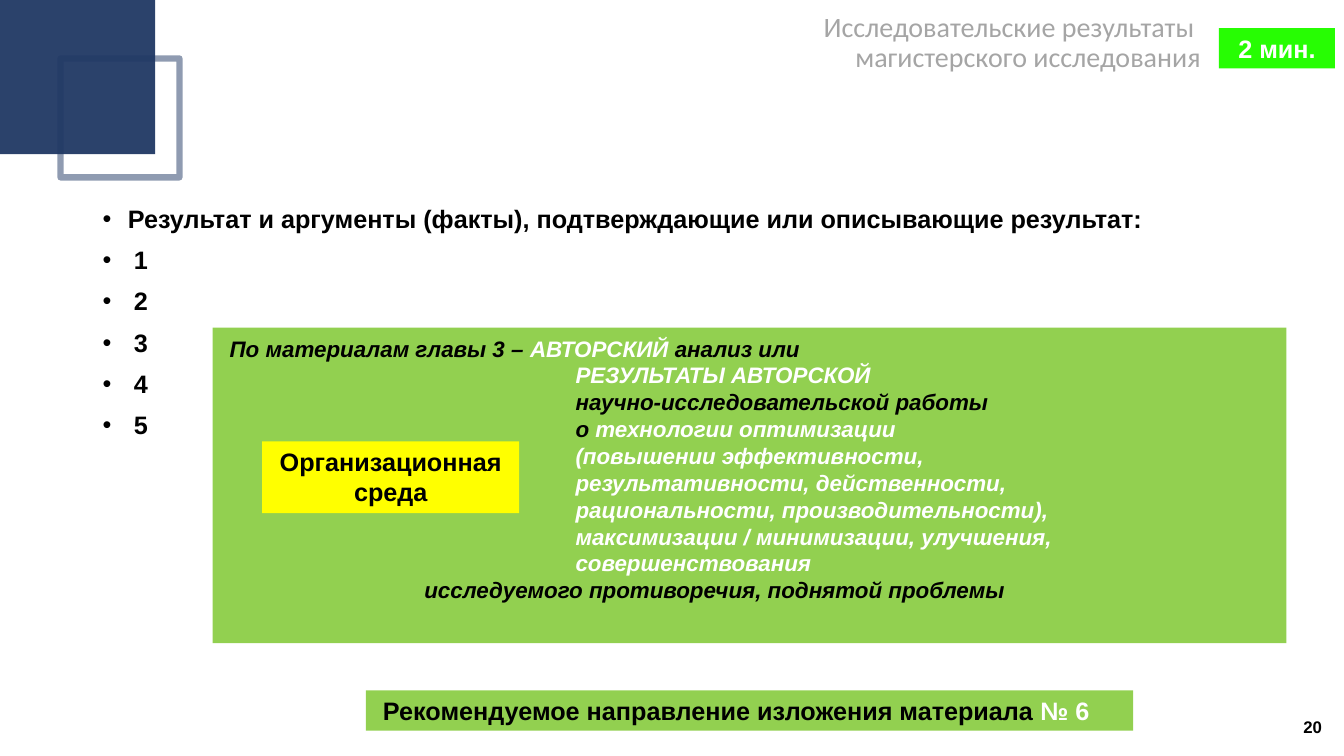
from lxml import etree
from pptx import Presentation
from pptx.dml.color import RGBColor
from pptx.enum.shapes import MSO_SHAPE
from pptx.enum.text import MSO_ANCHOR, PP_ALIGN
from pptx.oxml.ns import qn
from pptx.util import Inches, Pt

RECT = MSO_SHAPE.RECTANGLE
TOP, MIDDLE = MSO_ANCHOR.TOP, MSO_ANCHOR.MIDDLE
LEFT, CENTER, RIGHT = PP_ALIGN.LEFT, PP_ALIGN.CENTER, PP_ALIGN.RIGHT

NAVY = RGBColor(0x20, 0x38, 0x64)
GREEN = RGBColor(0x92, 0xD0, 0x50)
LIME = RGBColor(0x27, 0xFD, 0x03)
YELLOW = RGBColor(0xFF, 0xFF, 0x00)
GREY = RGBColor(0xA5, 0xA5, 0xA5)
BLACK = RGBColor(0x00, 0x00, 0x00)
WHITE = RGBColor(0xFF, 0xFF, 0xFF)


class Deck:
    font = "Arial"

    def __init__(self):
        self.prs = Presentation()
        self.prs.slide_width = Inches(13.33)
        self.prs.slide_height = Inches(7.5)
        self.slide = self.prs.slides.add_slide(self.prs.slide_layouts[6])

    def fade(self, fill, percent):
        """Set the opacity of a solid fill on a shape or its line."""
        color = fill._xPr.find(qn("a:solidFill"))[0]
        etree.SubElement(color, qn("a:alpha")).set("val", str(percent * 1000))

    def rect(self, box, fill=None, line=None, width=0, alpha=100):
        shape = self.slide.shapes.add_shape(RECT, *map(Inches, box))
        shape.shadow.inherit = False
        if fill is None:
            shape.fill.background()
        else:
            shape.fill.solid()
            shape.fill.fore_color.rgb = fill
        if line is None:
            shape.line.fill.background()
        else:
            shape.line.color.rgb = line
            shape.line.width = Pt(width)
        if alpha < 100:
            self.fade(shape.fill if line is None else shape.line.fill, alpha)
        return shape

    def area(self, box):
        return self.slide.shapes.add_textbox(*map(Inches, box))

    def frame(self, shape, anchor=TOP, inset=(0.1, 0.05)):
        frame = shape.text_frame
        frame.word_wrap = True
        frame.vertical_anchor = anchor
        frame.margin_left = frame.margin_right = Inches(inset[0])
        frame.margin_top = frame.margin_bottom = Inches(inset[1])
        return frame

    def para(self, frame, runs, size=18, align=LEFT, indent=0, bullet=False,
             space=None, gap=0, bold=True, italic=False, font=None):
        """Add a paragraph of (text, colour) runs."""
        first = not frame.paragraphs[0].runs
        para = frame.paragraphs[0] if first else frame.add_paragraph()
        props = para._p.get_or_add_pPr()
        props.set("marL", str(Inches(indent)))
        if bullet:
            props.set("indent", str(-Inches(indent)))
            etree.SubElement(props, qn("a:buFont")).set("typeface", "Arial")
            etree.SubElement(props, qn("a:buChar")).set("char", "•")
        para.alignment = align
        if space:
            para.line_spacing = space
        if gap and not first:
            para.space_before = Pt(gap)
        for text, color in runs:
            run = para.add_run()
            run.text = text
            run.font.name = font or self.font
            run.font.size = Pt(size)
            run.font.bold = bold
            run.font.italic = italic
            run.font.color.rgb = color

    def label(self, box, fill, runs, align=CENTER, indent=0):
        frame = self.frame(self.rect(box, fill))
        self.para(frame, runs, align=align, indent=indent)

    def save(self):
        self.prs.save("out.pptx")


def main():
    deck = Deck()
    deck.rect((0.6, 0.58, 1.18, 1.18), line=NAVY, width=4.5, alpha=50)
    deck.rect((0, -0.01, 1.54, 1.54), NAVY, alpha=95)

    results = deck.frame(deck.area((0.92, 2, 11.5, 4.76)))
    head = "Результат и аргументы (факты), подтверждающие или описывающие результат:"
    for text in (head, "1", "2", "3", "4", "5"):
        deck.para(results, [(text, BLACK)], bullet=True, space=0.9, gap=10,
                  indent=0.25 if text == head else 0.31)

    topic = deck.frame(deck.rect((2.11, 3.25, 10.65, 3.13), GREEN),
                       inset=(0.1, 0.07))
    near, far, mid = 0.07, 3.5, 2
    lines = (
        (near, [("По материалам главы 3 – ", BLACK), ("АВТОРСКИЙ", WHITE),
                (" анализ или", BLACK)]),
        (far, [("РЕЗУЛЬТАТЫ АВТОРСКОЙ", WHITE)]),
        (far, [("научно-исследовательской работы", BLACK)]),
        (far, [("о ", BLACK), ("технологии оптимизации", WHITE)]),
        (far, [("(повышении эффективности,", WHITE)]),
        (far, [("результативности, действенности,", WHITE)]),
        (far, [("рациональности, производительности),", WHITE)]),
        (far, [("максимизации / минимизации, улучшения,", WHITE)]),
        (far, [("совершенствования", WHITE)]),
        (mid, [("исследуемого противоречия, поднятой проблемы", BLACK)]),
    )
    for indent, runs in lines:
        deck.para(topic, runs, size=16, indent=indent, italic=True)

    deck.label((2.6, 4.38, 2.55, 0.71), YELLOW,
               [("Организационная среда", BLACK)])
    deck.label((12.09, 0.28, 1.15, 0.4), LIME, [("2 мин.", WHITE)])
    deck.label((3.63, 6.85, 7.61, 0.4), GREEN,
               [("Рекомендуемое направление изложения материала ", BLACK),
                ("№ 6", WHITE)], align=LEFT, indent=0.07)

    title = deck.frame(deck.area((1.25, 0.13, 10.66, 0.7)), inset=(0, 0))
    for text in ("Исследовательские результаты ", "магистерского исследования"):
        deck.para(title, [(text, GREY)], size=20, align=RIGHT, space=0.9,
                  bold=False, font="Calibri")

    number = deck.frame(deck.area((10.21, 7.01, 3, 0.4)), MIDDLE)
    deck.para(number, [("20", BLACK)], size=12, align=RIGHT)
    deck.save()


if __name__ == "__main__":
    main()
